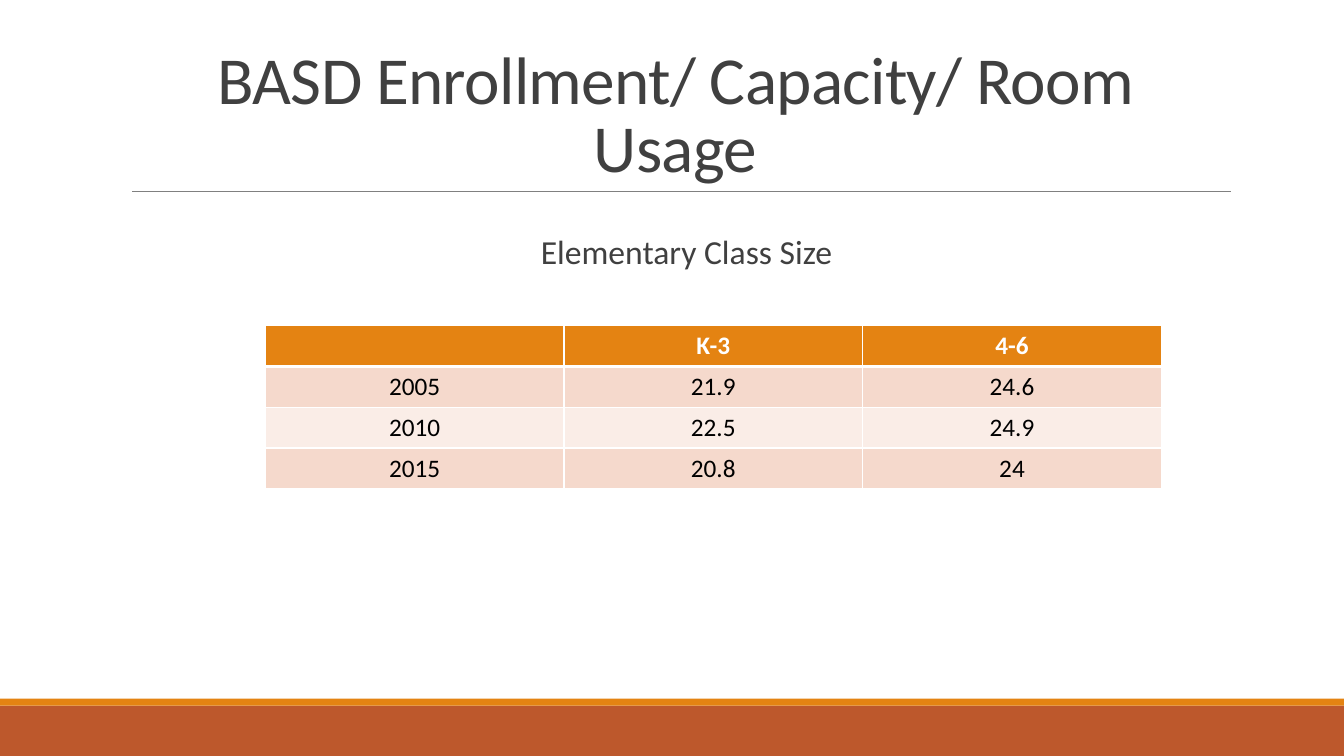
from dataclasses import dataclass
from lxml.etree import SubElement as Sub
from pptx import Presentation as Deck
from pptx.dml.color import RGBColor as Rgb
from pptx.enum.shapes import MSO_CONNECTOR as Link, MSO_SHAPE as Form
from pptx.enum.text import MSO_ANCHOR as Anchor, PP_ALIGN as Align
from pptx.oxml.ns import qn
from pptx.util import Inches, Pt


@dataclass(frozen=True)
class Theme:
    """Colours, font and type sizes of the slide."""
    font: str = "Calibri"
    ink: str = "404040"
    black: str = "000000"
    white: str = "FFFFFF"
    rule: str = "808080"
    rust: str = "BD582C"
    amber: str = "E48312"
    bands: tuple = ("F5D9CC", "FAEDE7")
    title: int = 48
    body: int = 24
    cell: int = 18


class Page:
    """Draws on one slide, with lengths in percent of its size."""

    def __init__(self, deck, theme):
        self.theme = theme
        self.wide, self.high = deck.slide_width, deck.slide_height
        self.shapes = deck.slides.add_slide(deck.slide_layouts[6]).shapes

    def place(self, *spans):
        """Turn percent pairs into slide lengths."""
        sides = (self.wide, self.high) * 2
        return [round(side * span / 100) for side, span in zip(sides, spans)]

    def style(self, para, size, color, bold=False):
        """Centre a paragraph and format its runs."""
        para.alignment = Align.CENTER
        for run in para.runs:
            font = run.font
            font.name, font.size, font.bold = self.theme.font, Pt(size), bold
            font.color.rgb = Rgb.from_string(color)

    def bar(self, top, tall, color):
        """Draw a full-width bar."""
        bar = self.shapes.add_shape(Form.RECTANGLE, *self.place(0, top, 100, tall))
        bar.shadow.inherit = False
        bar.fill.solid()
        bar.fill.fore_color.rgb = Rgb.from_string(color)
        bar.line.fill.background()

    def rule(self, left, right, top):
        """Draw a thin level line."""
        rule = self.shapes.add_connector(Link.STRAIGHT, *self.place(left, top, right, top))
        rule.line.color.rgb = Rgb.from_string(self.theme.rule)
        rule.line.width = Pt(0.5)
        Sub(rule._element.spPr, qn("a:effectLst"))

    def text(self, words, spans, size, anchor=Anchor.TOP, inset=0.1):
        """Add a wrapped text box and return its paragraph."""
        frame = self.shapes.add_textbox(*self.place(*spans)).text_frame
        frame.word_wrap = True
        frame.vertical_anchor = anchor
        frame.margin_left = frame.margin_right = Inches(inset)
        frame.text = words
        para = frame.paragraphs[0]
        self.style(para, size, self.theme.ink)
        return para

    def edge(self, cell, head):
        """Draw white borders, thicker below the header."""
        props = cell._tc.get_or_add_tcPr()
        for spot, side in enumerate("LRTB"):
            width = Pt(3 if head and side == "B" else 1)
            line = Sub(props, qn(f"a:ln{side}"), w=str(width))
            Sub(Sub(line, qn("a:solidFill")), qn("a:srgbClr"), val=self.theme.white)
            props.insert(spot, line)

    def table(self, rows, spans):
        """Add a banded table with a header row."""
        theme = self.theme
        grid = self.shapes.add_table(len(rows), len(rows[0]), *self.place(*spans)).table
        for i, row in enumerate(rows):
            head = i == 0
            fill = theme.amber if head else theme.bands[(i - 1) % 2]
            for j, words in enumerate(row):
                cell = grid.cell(i, j)
                cell.text = words
                cell.fill.solid()
                cell.fill.fore_color.rgb = Rgb.from_string(fill)
                ink = theme.white if head else theme.black
                self.style(cell.text_frame.paragraphs[0], theme.cell, ink, head)
                self.edge(cell, head)


def main():
    """Build the slide and save it."""
    deck = Deck()
    deck.slide_width, deck.slide_height = Inches(13.33), Inches(7.5)
    theme = Theme()
    page = Page(deck, theme)
    page.bar(93.33, 6.67, theme.rust)
    page.bar(92.4, 0.93, theme.amber)
    page.rule(9.83, 91.6, 25.33)
    title = page.text("BASD Enrollment/ Capacity/ Room Usage",
                      (9, 4.13, 82.5, 21.2), theme.title, Anchor.BOTTOM)
    title.line_spacing = 0.85
    title.runs[0]._r.get_or_add_rPr().set("spc", "-50")
    body = page.text("Elementary Class Size", (9, 29.87, 82.5, 59.47), theme.body, inset=0)
    body._p.get_or_add_pPr().set("marL", str(Inches(0.22)))
    page.table([("", "K-3", "4-6"),
                ("2005", "21.9", "24.6"),
                ("2010", "22.5", "24.9"),
                ("2015", "20.8", "24")], (19.73, 43.07, 66.69, 21.6))
    deck.save("out.pptx")


if __name__ == "__main__":
    main()
